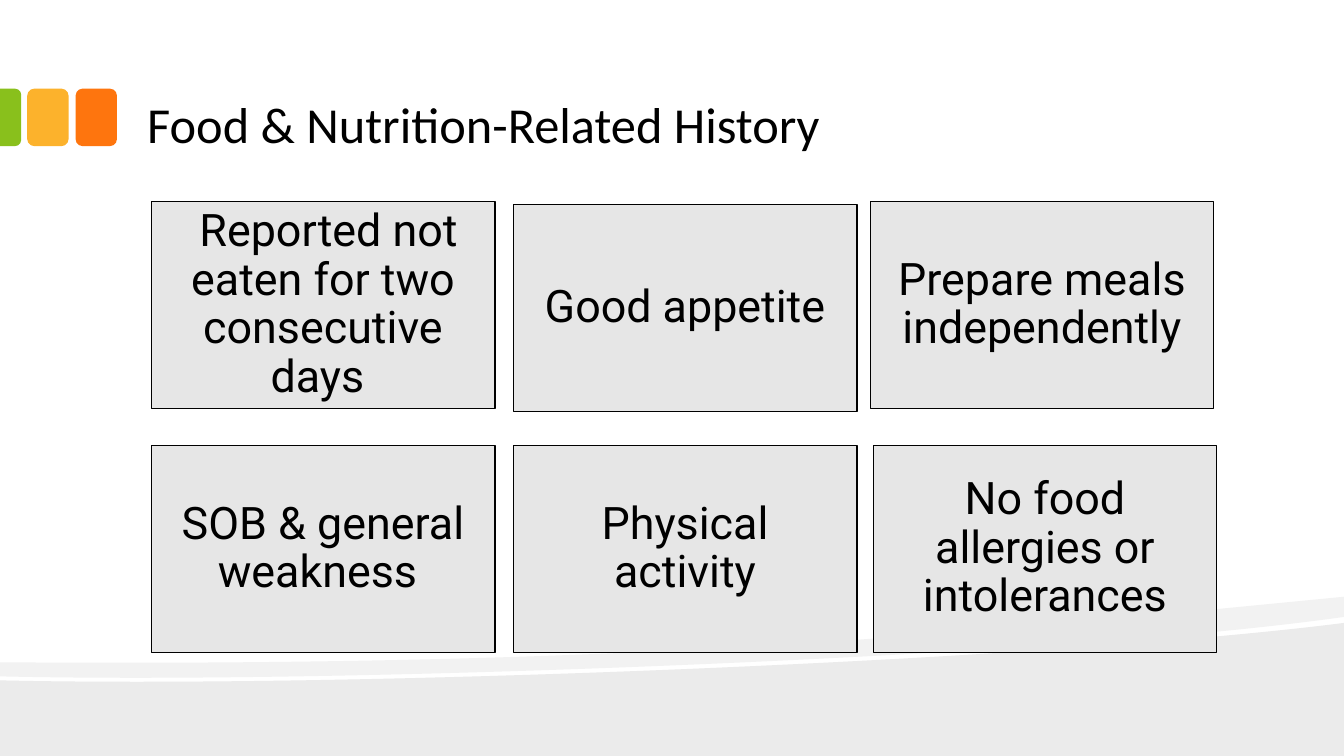
from dataclasses import dataclass

from pptx import Presentation
from pptx.dml.color import RGBColor
from pptx.enum.shapes import MSO_SHAPE
from pptx.enum.text import MSO_ANCHOR, PP_ALIGN
from pptx.oxml.ns import qn
from pptx.shapes.base import BaseShape
from pptx.slide import Slide
from pptx.util import Inches, Pt

RECTANGLE = MSO_SHAPE.RECTANGLE
ROUNDED = MSO_SHAPE.ROUNDED_RECTANGLE
TAB = MSO_SHAPE.ROUND_2_SAME_RECTANGLE
MIDDLE, BOTTOM = MSO_ANCHOR.MIDDLE, MSO_ANCHOR.BOTTOM
LEFT, CENTER = PP_ALIGN.LEFT, PP_ALIGN.CENTER

SLIDE_WIDTH, SLIDE_HEIGHT = 13.33, 7.5
GRID_LEFT, GRID_TOP = 1.5, 2.0
COLUMN_STEP, ROW_STEP = 3.58, 2.42
CARD_WIDTH, CARD_HEIGHT = 3.41, 2.05
UNITS_PER_INCH = 1000

Point = tuple[float, float]


@dataclass(frozen=True)
class Card:
    text: str
    column: int
    row: int
    shift_x: float = 0
    shift_y: float = 0


@dataclass(frozen=True)
class Block:
    preset: MSO_SHAPE
    left: float
    top: float
    width: float
    height: float
    color: str
    rotation: float = 0
    rounding: float = 0.17


@dataclass(frozen=True)
class Wave:
    """An outline of segments: one point is a line, three points are a curve."""
    color: str
    start: Point
    segments: list[tuple[Point, ...]]


CARDS = [
    Card(" Reported not eaten for two consecutive days ", 0, 0),
    Card("Good appetite", 1, 0, shift_x=0.01, shift_y=0.03),
    Card("Prepare meals independently", 2, 0, shift_x=-0.03),
    Card("SOB & general weakness ", 0, 1),
    Card("Physical activity", 1, 1, shift_x=0.01),
    Card("No food allergies or intolerances", 2, 1),
]
BLOCKS = [
    Block(ROUNDED, 0.75, 0.88, 0.41, 0.57, "FE750E"),
    Block(ROUNDED, 0.27, 0.88, 0.41, 0.57, "FCB22C"),
    Block(TAB, -0.18, 1.06, 0.57, 0.21, "89C01C", rotation=90, rounding=0.29),
]
WAVES = [
    Wave("EBEBEB", (SLIDE_WIDTH, 6.18), [
        ((SLIDE_WIDTH, SLIDE_HEIGHT),),
        ((0, SLIDE_HEIGHT),),
        ((0, 6.75),),
        ((3.52, 6.83), (10.42, 6.55), (SLIDE_WIDTH, 6.18)),
    ]),
    Wave("F2F2F2", (SLIDE_WIDTH, 5.92), [
        ((SLIDE_WIDTH, 6.12),),
        ((12.55, 6.23), (11.49, 6.33), (10.29, 6.41)),
        ((6.98, 6.63), (2.58, 6.77), (0, 6.71)),
        ((0, 6.57),),
        ((6.52, 6.62), (9.71, 6.27), (SLIDE_WIDTH, 5.92)),
    ]),
]


def rgb(color: str) -> RGBColor:
    return RGBColor.from_string(color)


def paint(shape: BaseShape, color: str) -> None:
    shape.shadow.inherit = False
    shape.fill.solid()
    shape.fill.fore_color.rgb = rgb(color)
    shape.line.fill.background()


def write(box: BaseShape, text: str, *, font: str, size: float, align: PP_ALIGN,
          anchor: MSO_ANCHOR, inset_y: float, spacing: float = 1.0,
          color: str = "000000") -> None:
    frame = box.text_frame
    frame.word_wrap = True
    frame.vertical_anchor = anchor
    frame.margin_left = frame.margin_right = Inches(0.13)
    frame.margin_top = frame.margin_bottom = Inches(inset_y)
    para = frame.paragraphs[0]
    para.alignment = align
    para.line_spacing = spacing
    span = para.add_run()
    span.text = text
    span.font.name = font
    span.font.size = Pt(size)
    span.font.color.rgb = rgb(color)


def add_wave(page: Slide, wave: Wave) -> None:
    """Draw the outline with lines, then join each three-point segment into a curve."""
    def scaled(point: Point) -> Point:
        return point[0] * UNITS_PER_INCH, point[1] * UNITS_PER_INCH

    builder = page.shapes.build_freeform(*scaled(wave.start),
                                         scale=Inches(1) / UNITS_PER_INCH)
    builder.add_line_segments(
        [scaled(point) for segment in wave.segments for point in segment], close=True)
    shape = builder.convert_to_shape()
    lines = iter(list(shape.element.iter(qn("a:lnTo"))))
    for segment in wave.segments:
        first, *others = [next(lines) for _ in segment]
        if others:
            first.tag = qn("a:cubicBezTo")
        for line in others:
            first.append(line[0])
            line.getparent().remove(line)
    paint(shape, wave.color)


def add_block(page: Slide, block: Block) -> None:
    shape = page.shapes.add_shape(
        block.preset, Inches(block.left), Inches(block.top),
        Inches(block.width), Inches(block.height))
    shape.adjustments[0] = block.rounding
    shape.rotation = block.rotation
    paint(shape, block.color)


def add_card(page: Slide, card: Card) -> None:
    left = GRID_LEFT + card.column * COLUMN_STEP + card.shift_x
    top = GRID_TOP + card.row * ROW_STEP + card.shift_y
    box = page.shapes.add_shape(RECTANGLE, Inches(left), Inches(top),
                                Inches(CARD_WIDTH), Inches(CARD_HEIGHT))
    paint(box, "E6E6E6")
    box.line.color.rgb = rgb("000000")
    box.line.width = Pt(0.85)
    write(box, card.text, font="Roboto", size=32, align=CENTER, anchor=MIDDLE,
          inset_y=0.13, spacing=0.9)


def main() -> None:
    deck = Presentation()
    deck.slide_width, deck.slide_height = Inches(SLIDE_WIDTH), Inches(SLIDE_HEIGHT)
    page = deck.slides.add_slide(deck.slide_layouts[6])

    for wave in WAVES:
        add_wave(page, wave)
    for block in BLOCKS:
        add_block(page, block)

    title = page.shapes.add_textbox(Inches(1.33), Inches(0.17),
                                    Inches(10.66), Inches(1.42))
    write(title, "Food & Nutrition-Related History", font="Calibri", size=36,
          align=LEFT, anchor=BOTTOM, inset_y=0.07)

    for card in CARDS:
        add_card(page, card)
    deck.save("out.pptx")


if __name__ == "__main__":
    main()
